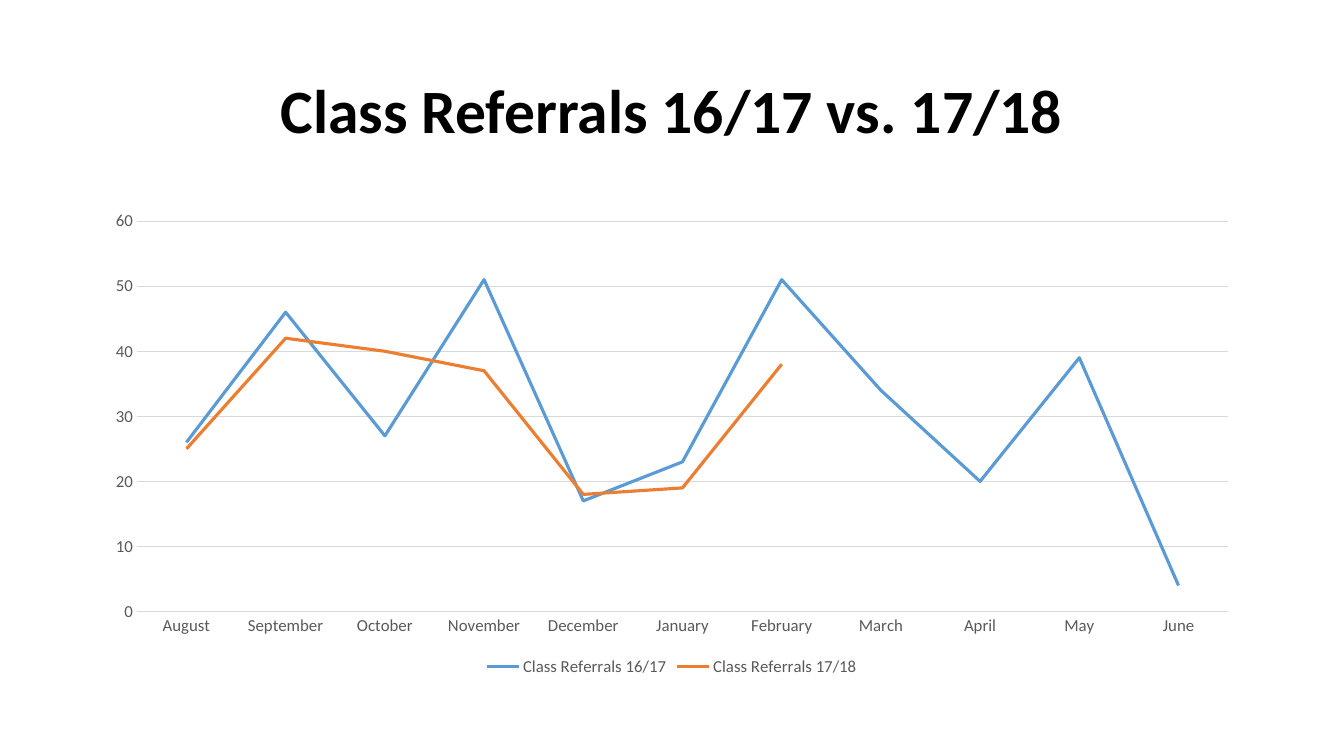
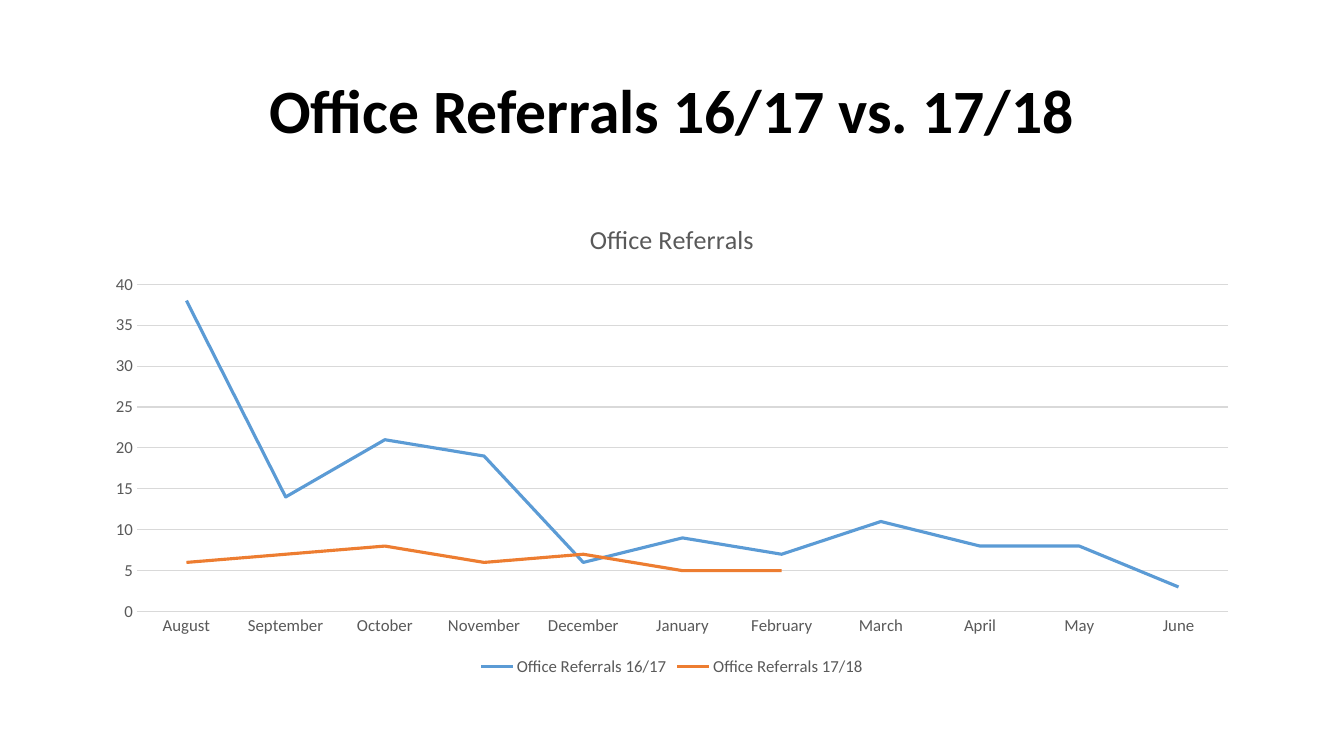
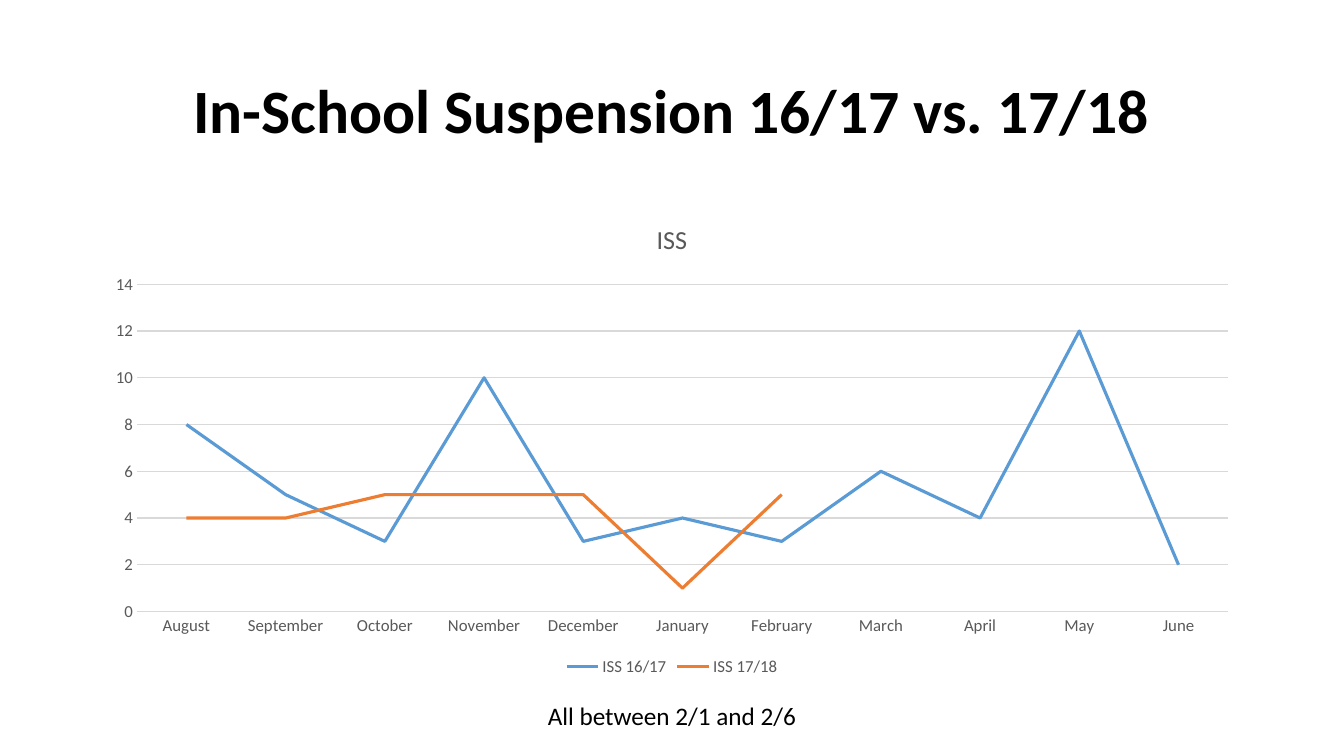
from dataclasses import dataclass

from pptx import Presentation
from pptx.chart.data import CategoryChartData
from pptx.dml.color import RGBColor
from pptx.enum.chart import XL_CHART_TYPE, XL_LEGEND_POSITION, XL_TICK_MARK
from pptx.enum.text import MSO_ANCHOR, PP_ALIGN
from pptx.util import Inches, Pt

LINE_CHART = XL_CHART_TYPE.LINE
LEGEND_BOTTOM = XL_LEGEND_POSITION.BOTTOM
NO_TICK = XL_TICK_MARK.NONE
MIDDLE = MSO_ANCHOR.MIDDLE
CENTER = PP_ALIGN.CENTER


@dataclass(frozen=True)
class Theme:
    font: str = "Calibri"
    ink: RGBColor = RGBColor(0x00, 0x00, 0x00)
    muted: RGBColor = RGBColor(0x59, 0x59, 0x59)
    grid: RGBColor = RGBColor(0xD9, 0xD9, 0xD9)
    series: tuple = (RGBColor(0x5B, 0x9B, 0xD5), RGBColor(0xED, 0x7D, 0x31))
    title_size: float = 44
    note_size: float = 18
    chart_title_size: float = 18.6
    label_size: float = 12
    series_width: float = 2.25
    grid_width: float = 0.75


THEME = Theme()
WIDTH, HEIGHT = Inches(13.33), Inches(7.5)
COLUMNS, ROWS = 145, 150

# Boxes as column, row, columns wide, rows high
TITLE_BOX = (10, 8, 125, 29)
CHART_BOX = (10, 40, 125, 95)
NOTE_BOX = (58, 138, 29, 8)

MONTHS = ("August", "September", "October", "November", "December", "January",
          "February", "March", "April", "May", "June")
YEARS = ("16/17", "17/18")

# Heading, series name, chart title, values by year, note
SLIDES = (
    ("Class Referrals", "Class Referrals", None,
     ((26, 46, 27, 51, 17, 23, 51, 34, 20, 39, 4),
      (25, 42, 40, 37, 18, 19, 38)), None),
    ("Office Referrals", "Office Referrals", "Office Referrals",
     ((38, 14, 21, 19, 6, 9, 7, 11, 8, 8, 3),
      (6, 7, 8, 6, 7, 5, 5)), None),
    ("In-School Suspension", "ISS", "ISS",
     ((8, 5, 3, 10, 3, 4, 3, 6, 4, 12, 2),
      (4, 4, 5, 5, 5, 1, 5)), "All between 2/1 and 2/6"),
)


def place(box):
    """Turn a box in grid units into left, top, width and height."""
    col, row, cols, rows = box
    return (WIDTH * col // COLUMNS, HEIGHT * row // ROWS,
            WIDTH * cols // COLUMNS, HEIGHT * rows // ROWS)


def style_font(font, size, color, bold=False):
    font.name = THEME.font
    font.size = Pt(size)
    font.bold = bold
    font.color.rgb = color


def style_line(line, color, width):
    line.color.rgb = color
    line.width = Pt(width)


def add_text(slide, box, text, size, bold=False, wrap=True):
    tf = slide.shapes.add_textbox(*place(box)).text_frame
    tf.word_wrap = wrap
    tf.vertical_anchor = MIDDLE
    p = tf.paragraphs[0]
    p.text = text
    p.alignment = CENTER
    p.line_spacing = 0.9 if bold else 1.0
    style_font(p.font, size, THEME.ink, bold)


def style_axes(chart):
    for axis in (chart.category_axis, chart.value_axis):
        axis.major_tick_mark = axis.minor_tick_mark = NO_TICK
        style_font(axis.tick_labels.font, THEME.label_size, THEME.muted)
    chart.value_axis.format.line.fill.background()
    chart.value_axis.has_major_gridlines = True
    gridlines = chart.value_axis.major_gridlines
    for part in (chart.category_axis, gridlines):
        style_line(part.format.line, THEME.grid, THEME.grid_width)


def add_year_chart(slide, box, name, title, values):
    data = CategoryChartData()
    data.categories = MONTHS
    for year, counts in zip(YEARS, values):
        missing = (None,) * (len(MONTHS) - len(counts))
        data.add_series(f"{name} {year}", counts + missing)
    chart = slide.shapes.add_chart(LINE_CHART, *place(box), data).chart
    style_font(chart.font, THEME.label_size, THEME.muted)

    chart.has_title = title is not None
    if title:
        p = chart.chart_title.text_frame.paragraphs[0]
        p.text = title
        style_font(p.font, THEME.chart_title_size, THEME.muted)
        chart.chart_title.include_in_layout = False

    chart.has_legend = True
    chart.legend.position = LEGEND_BOTTOM
    chart.legend.include_in_layout = False
    style_font(chart.legend.font, THEME.label_size, THEME.muted)

    style_axes(chart)
    chart.plots[0].vary_by_categories = False
    for series, color in zip(chart.plots[0].series, THEME.series):
        series.smooth = False
        style_line(series.format.line, color, THEME.series_width)


def add_comparison_slide(prs, heading, name, chart_title, values, note):
    slide = prs.slides.add_slide(prs.slide_layouts[6])
    add_text(slide, TITLE_BOX, f"{heading} {' vs. '.join(YEARS)}",
             THEME.title_size, bold=True)
    add_year_chart(slide, CHART_BOX, name, chart_title, values)
    if note:
        add_text(slide, NOTE_BOX, note, THEME.note_size, wrap=False)


def main():
    prs = Presentation()
    prs.slide_width, prs.slide_height = WIDTH, HEIGHT
    for content in SLIDES:
        add_comparison_slide(prs, *content)
    prs.save("out.pptx")


if __name__ == "__main__":
    main()
